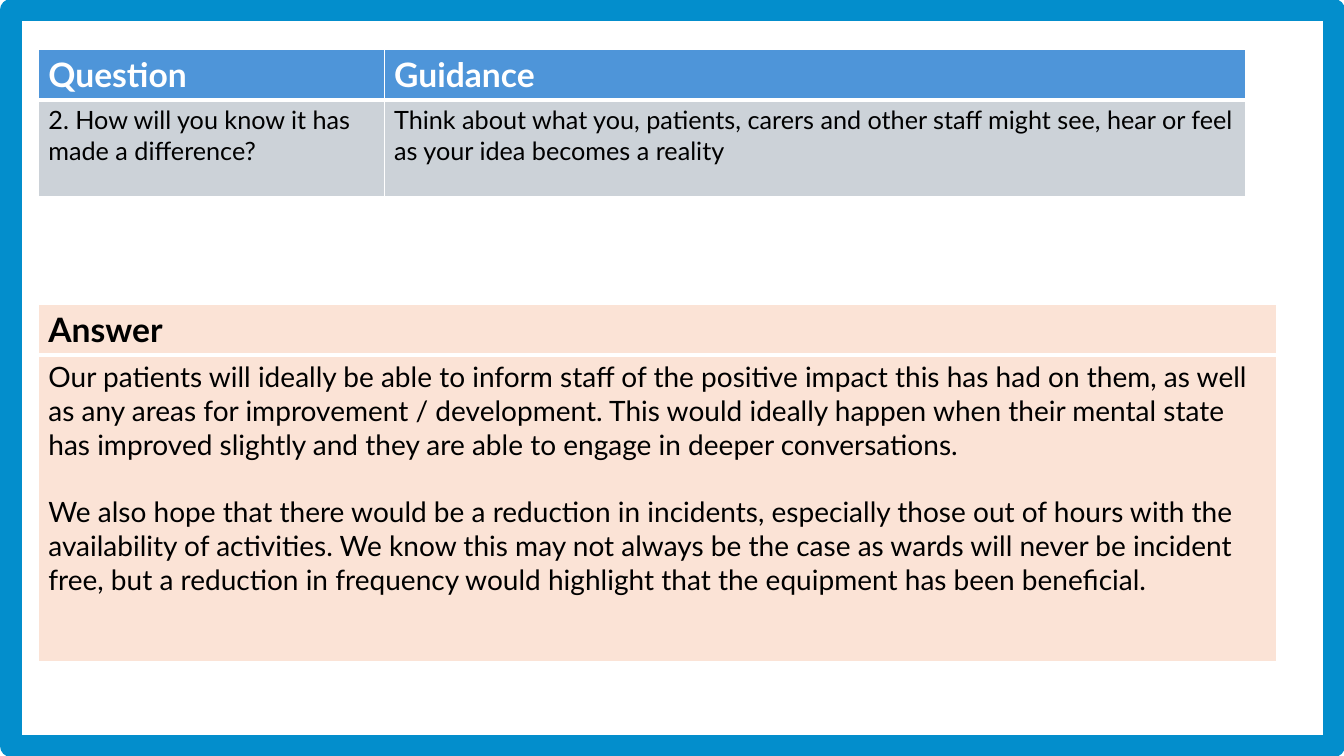
"""Build a framed slide with a question table above an answer table."""
import pptx
import pptx.dml.color
import pptx.enum.shapes
import pptx.oxml
import pptx.oxml.ns
import pptx.util

FONT = "Lato"
LEFT = 0.38
HEADER_HEIGHT = 0.49


def colour(value):
    return pptx.dml.color.RGBColor.from_string(value)


def add_borders(cell, bottom_width):
    properties = cell._tc.get_or_add_tcPr()
    widths = {"lnL": 1, "lnR": 1, "lnT": 1, "lnB": bottom_width}
    for index, (side, width) in enumerate(widths.items()):
        border = pptx.oxml.parse_xml(
            f'<a:{side} {pptx.oxml.ns.nsdecls("a")} w="{pptx.util.Pt(width)}">'
            f'<a:solidFill><a:srgbClr val="FFFFFF"/></a:solidFill></a:{side}>'
        )
        properties.insert(index, border)


deck = pptx.Presentation()
deck.slide_width = pptx.util.Inches(13.33)
deck.slide_height = pptx.util.Inches(7.5)
page = deck.slides.add_slide(deck.slide_layouts[6])

frame = page.shapes.add_shape(
    pptx.enum.shapes.MSO_SHAPE.RECTANGLE,
    *(pptx.util.Inches(length) for length in (0.11, 0.1, 13.12, 7.3)),
)
frame.shadow.inherit = False
frame.fill.background()
frame.line.color.rgb = colour("038ECC")
frame.line.width = pptx.util.Pt(16)

tables = [
    {
        "top": 0.49,
        "columns": [3.43, 8.54],
        "body_height": 0.96,
        "body_size": 18,
        "fills": ["4E95D9", "CCD2D8"],
        "header_colour": "FFFFFF",
        "rows": [
            [["Question"], ["Guidance"]],
            [
                ["2. How will you know it has made a difference?"],
                ["Think about what you, patients, carers and other staff might see, "
                 "hear or feel as your idea becomes a reality"],
            ],
        ],
    },
    {
        "top": 3.02,
        "columns": [12.28],
        "body_height": 3.04,
        "body_size": 20,
        "fills": ["FBE3D6", "FBE3D6"],
        "header_colour": "000000",
        "rows": [
            [["Answer"]],
            [[
                "Our patients will ideally be able to inform staff of the positive impact "
                "this has had on them, as well as any areas for improvement / development. "
                "This would ideally happen when their mental state has improved slightly "
                "and they are able to engage in deeper conversations.",
                "We also hope that there would be a reduction in incidents, especially "
                "those out of hours with the availability of activities. We know this may "
                "not always be the case as wards will never be incident free, but a "
                "reduction in frequency would highlight that the equipment has been "
                "beneficial.",
            ]],
        ],
    },
]

for content in tables:
    heights = [HEADER_HEIGHT, content["body_height"]]
    table = page.shapes.add_table(
        len(heights),
        len(content["columns"]),
        pptx.util.Inches(LEFT),
        pptx.util.Inches(content["top"]),
        pptx.util.Inches(sum(content["columns"])),
        pptx.util.Inches(sum(heights)),
    ).table
    table.horz_banding = False
    for column, width in zip(table.columns, content["columns"]):
        column.width = pptx.util.Inches(width)
    for row_index, row in enumerate(content["rows"]):
        is_header = row_index == 0
        size = 24 if is_header else content["body_size"]
        table.rows[row_index].height = pptx.util.Inches(heights[row_index])
        for column_index, paragraphs in enumerate(row):
            cell = table.cell(row_index, column_index)
            cell.fill.solid()
            cell.fill.fore_color.rgb = colour(content["fills"][row_index])
            add_borders(cell, 3 if is_header else 1)
            for para_index, text in enumerate(paragraphs):
                if para_index == 0:
                    para = cell.text_frame.paragraphs[0]
                else:
                    para = cell.text_frame.add_paragraph()
                    para.space_before = pptx.util.Pt(size * 1.2)
                span = para.add_run()
                span.text = text
                span.font.name = FONT
                span.font.size = pptx.util.Pt(size)
                span.font.bold = is_header
                span.font.color.rgb = colour(
                    content["header_colour"] if is_header else "000000"
                )

deck.save("out.pptx")
